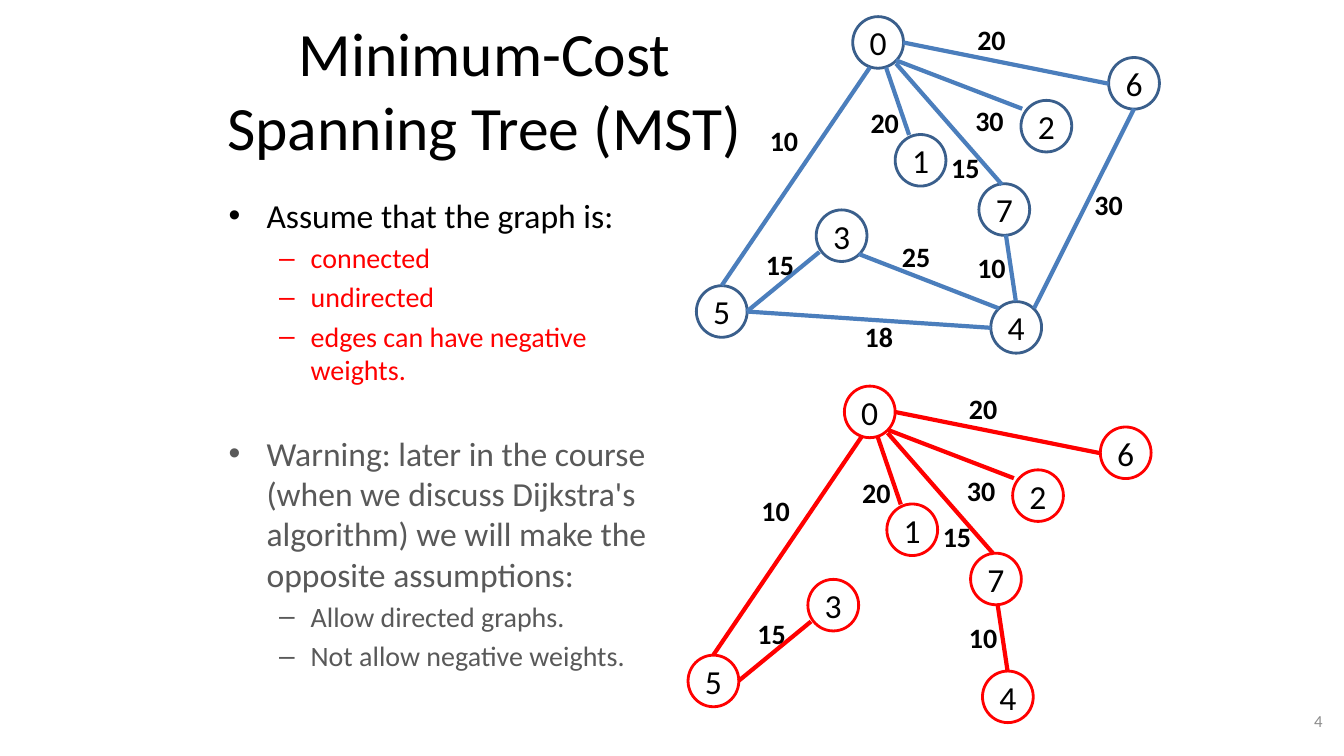
"""Builds a slide on minimum-cost spanning trees with a graph and its tree."""
from lxml import etree
from pptx import Presentation
from pptx.dml.color import RGBColor
from pptx.enum import shapes, text
from pptx.oxml.ns import qn
from pptx.util import Cm, Pt

TITLE = "Minimum-Cost Spanning Tree (MST)"
BLACK, RED, GREY = "000000", "FF0000", "595959"
POINTS = [
    (0, BLACK, "Assume that the graph is:"),
    (1, RED, "connected"),
    (1, RED, "undirected"),
    (1, RED, "edges can have negative weights."),
    (0, GREY, "Warning: later in the course (when we discuss Dijkstra's "
              "algorithm) we will make the opposite assumptions:"),
    (1, GREY, "Allow directed graphs."),
    (1, GREY, "Not allow negative weights."),
]
SIZES = (24, 20)
GAP = 33

NODES = {
    "0": (21.49, 0.42), "1": (22.56, 3.39), "7": (24.67, 4.63),
    "2": (25.73, 2.53), "5": (17.55, 7.2), "3": (20.57, 5.29),
    "4": (24.97, 7.6), "6": (27.94, 1.45),
}
# Each edge: weight, in the tree, start, end, label corner
EDGES = [
    ("20", True, (22.76, 1.07), (27.94, 2.11), (24.38, 0.43)),
    ("30", True, (22.58, 1.52), (25.76, 2.74), (24.33, 2.49)),
    ("20", True, (22.33, 1.7), (22.91, 3.4), (21.69, 2.54)),
    ("10", True, (21.92, 1.7), (18.19, 7.19), (19.15, 3)),
    ("15", True, (22.58, 1.6), (25.25, 4.65), (23.72, 3.66)),
    ("15", True, (18.82, 7.85), (20.65, 6.35), (19.05, 6.1)),
    ("18", False, (18.82, 7.85), (24.97, 8.26), (21.54, 7.92)),
    ("25", False, (21.64, 6.4), (25.17, 7.77), (22.48, 5.92)),
    ("10", True, (25.35, 5.92), (25.6, 7.59), (24.38, 6.2)),
    ("30", False, (28.58, 2.74), (26.06, 7.77), (27.33, 4.6)),
]
TREE = [edge for edge in EDGES if edge[1]]
GRAPHS = [
    (EDGES, (0, 0), "3A5F8C", "4B7EBC"),
    (TREE, (-0.21, 9.31), RED, RED),
]


def paint(color, tone):
    color.rgb = RGBColor.from_string(tone)


def style(para, size, tone=BLACK, bold=False):
    for run in para.runs:
        run.font.name = "Calibri"
        run.font.size = Pt(size)
        run.font.bold = bold
        paint(run.font.color, tone)


def place(shape, left, top, width, height):
    shape.left, shape.top = Cm(left), Cm(top)
    shape.width, shape.height = Cm(width), Cm(height)


def add_node(group, name, x, y, tone):
    node = group.shapes.add_shape(
        shapes.MSO_SHAPE.OVAL, Cm(x), Cm(y), Cm(1.28), Cm(1.3))
    node.shadow.inherit = False
    node.fill.background()
    paint(node.line.color, tone)
    node.line.width = Pt(2)
    frame = node.text_frame
    frame.margin_left = frame.margin_right = 0
    frame.margin_top = frame.margin_bottom = 0
    frame.word_wrap = False
    frame.vertical_anchor = text.MSO_ANCHOR.MIDDLE
    frame.text = name
    frame.paragraphs[0].alignment = text.PP_ALIGN.CENTER
    style(frame.paragraphs[0], 24)


def add_edge(group, start, end, tone):
    edge = group.shapes.add_connector(
        shapes.MSO_CONNECTOR.STRAIGHT, *map(Cm, start + end))
    paint(edge.line.color, tone)
    edge.line.width = Pt(3)
    props = edge._element.find(qn("p:spPr"))
    etree.SubElement(props, qn("a:effectLst"))


def add_weight(group, label, x, y):
    box = group.shapes.add_textbox(Cm(x), Cm(y), Cm(1.24), Cm(1.11))
    box.text_frame.word_wrap = False
    box.text_frame.text = label
    style(box.text_frame.paragraphs[0], 20, bold=True)


def add_graph(slide, edges, shift, rim, tone):
    def move(spot):
        return spot[0] + shift[0], spot[1] + shift[1]

    group = slide.shapes.add_group_shape()
    for name, spot in NODES.items():
        add_node(group, name, *move(spot), rim)
    for _, _, start, end, _ in edges:
        add_edge(group, move(start), move(end), tone)
    for label, _, _, _, spot in edges:
        add_weight(group, label, *move(spot))


def add_points(body):
    place(body, 5.51, 4.78, 12.04, 13)
    frame = body.text_frame
    frame.auto_size = text.MSO_AUTO_SIZE.NONE
    for i, (level, tone, words) in enumerate(POINTS):
        para = frame.paragraphs[0] if i == 0 else frame.add_paragraph()
        para.text = words
        para.level = level
        if i and level == 0:
            para.space_before = Pt(GAP)
        style(para, SIZES[level], tone)


def add_number(slide):
    box = slide.shapes.add_textbox(Cm(25.68), Cm(17.65), Cm(7.9), Cm(1.02))
    frame = box.text_frame
    frame.word_wrap = True
    frame.vertical_anchor = text.MSO_ANCHOR.MIDDLE
    frame.text = "4"
    frame.paragraphs[0].alignment = text.PP_ALIGN.RIGHT
    style(frame.paragraphs[0], 12, "8C8C8C")


def main():
    deck = Presentation()
    deck.slide_width, deck.slide_height = Cm(33.87), Cm(19.05)
    slide = deck.slides.add_slide(deck.slide_layouts[1])
    title = slide.shapes.title
    place(title, 5.28, 0.64, 13.87, 3.18)
    title.text_frame.auto_size = text.MSO_AUTO_SIZE.NONE
    title.text_frame.text = TITLE
    style(title.text_frame.paragraphs[0], 44)
    add_points(slide.placeholders[1])
    add_number(slide)
    for graph in GRAPHS:
        add_graph(slide, *graph)
    deck.save("out.pptx")


if __name__ == "__main__":
    main()
